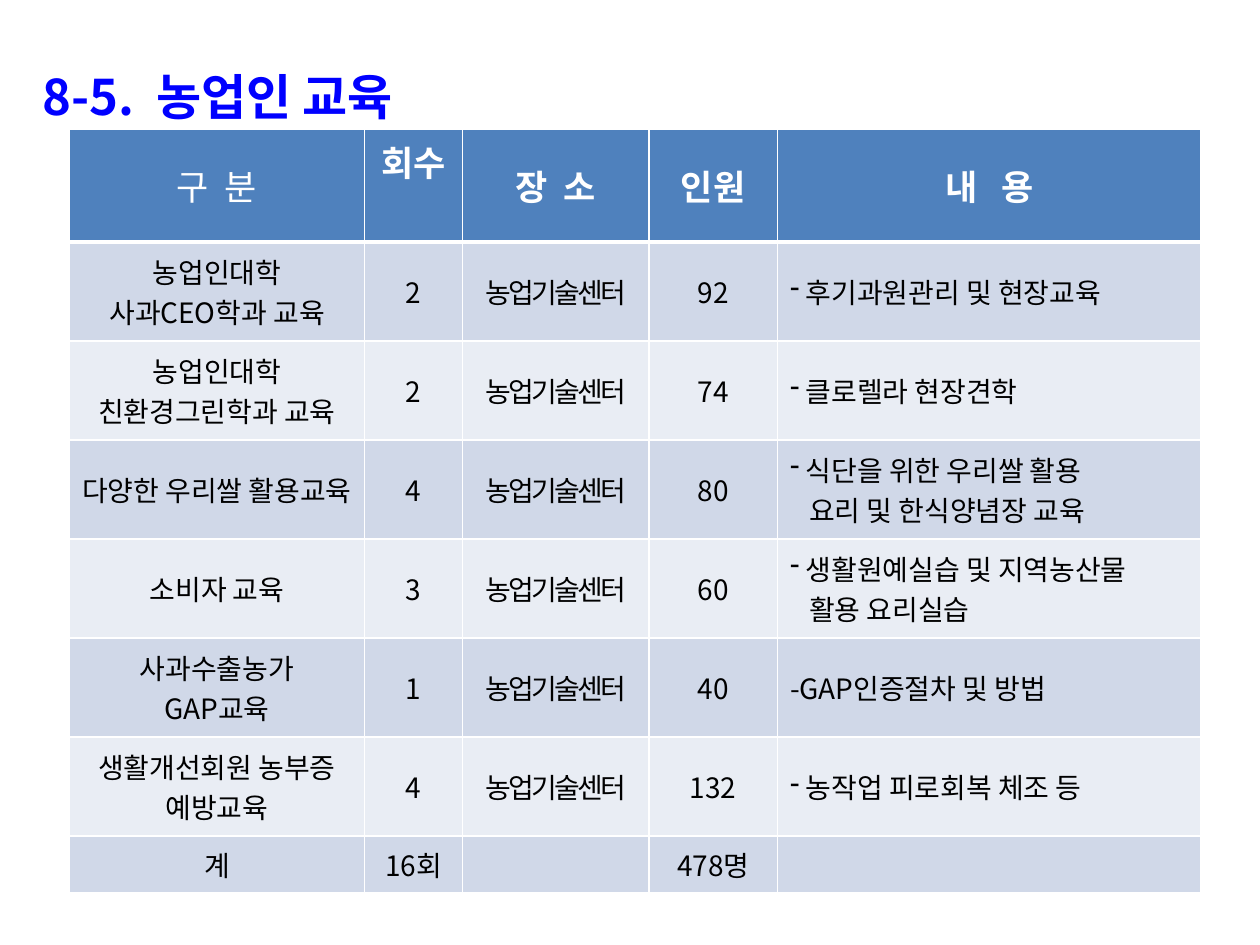
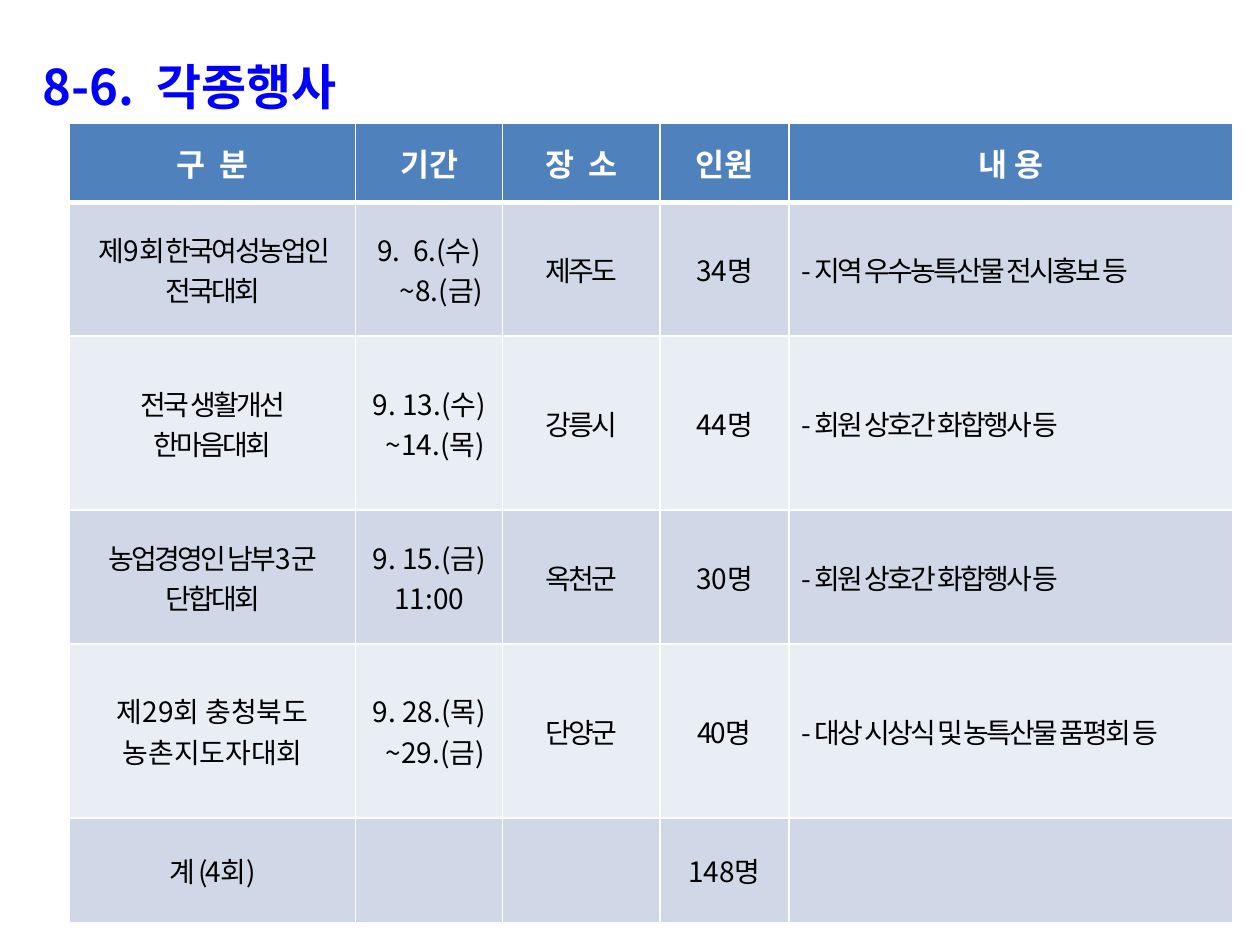
from dataclasses import dataclass
from lxml.etree import SubElement as Sub
from pptx import Presentation
from pptx.dml.color import RGBColor as Rgb
from pptx.enum.text import MSO_ANCHOR as Anchor, MSO_AUTO_SIZE as Fit, PP_ALIGN as Align
from pptx.oxml import parse_xml
from pptx.oxml.ns import nsdecls, qn
from pptx.util import Pt


@dataclass(frozen=True)
class Theme:
    face: str = "Noto Sans CJK KR"
    blue: str = "0000FF"
    head: str = "4F81BD"
    bands: tuple = ("D0D8E8", "E9EDF4")
    white: str = "FFFFFF"
    black: str = "000000"
    title: int = 28
    body: int = 16
    tight: float = -1.5


@dataclass(frozen=True)
class Line:
    text: str
    tight: bool = False
    left: bool = False
    dash: bool = False
    margin: float = 0
    indent: float = 0


THEME = Theme()
HANG = 27.5


def tight(text):
    return [Line(part, tight=True) for part in text.split("\n")]


def dash(text, *more):
    first = Line(text, left=True, dash=True, margin=9, indent=-9)
    return [first] + [Line(part, left=True, margin=11) for part in more]


def note(text):
    return [Line("- " + text, tight=True, left=True, margin=HANG, indent=-HANG)]


def hang(text, shift=0):
    return Line(text, margin=HANG, indent=shift - HANG)


def style(para, size, color, bold=False, space=0):
    font = para.font
    font.size = Pt(size)
    font.bold = bold
    font.color.rgb = Rgb.from_string(color)
    font.name = THEME.face
    props = para._p.pPr.find(qn("a:defRPr"))
    Sub(props, qn("a:ea")).set("typeface", THEME.face)
    if space:
        props.set("spc", str(round(space * 100)))


def inset(para, margin, indent):
    props = para._p.get_or_add_pPr()
    props.set("marL", str(Pt(margin)))
    props.set("indent", str(Pt(indent)))
    return props


def add_title(slide, text, top):
    box = slide.shapes.title
    box.left, box.top, box.width, box.height = Pt(17.3), Pt(top), Pt(680), Pt(47)
    frame = box.text_frame
    frame.word_wrap = True
    frame.auto_size = Fit.NONE
    frame.vertical_anchor = Anchor.MIDDLE
    para = frame.paragraphs[0]
    para.text = text
    para.alignment = Align.LEFT
    para.line_spacing = 1.2
    inset(para, 42, -42)
    style(para, THEME.title, THEME.blue, True)


def paint(cell, color):
    cell.fill.solid()
    cell.fill.fore_color.rgb = Rgb.from_string(color)
    cell.vertical_anchor = Anchor.MIDDLE


def rule(cell):
    edge = parse_xml(
        f'<a:lnB {nsdecls("a")} w="{Pt(3)}"><a:solidFill>'
        f'<a:srgbClr val="{THEME.white}"/></a:solidFill></a:lnB>')
    cell._tc.get_or_add_tcPr().insert(0, edge)


def fill_head(cell, text, size, bold):
    paint(cell, THEME.head)
    rule(cell)
    para = cell.text_frame.paragraphs[0]
    para.text = text
    para.alignment = Align.CENTER
    style(para, size, THEME.white, bold)


def fill_cell(cell, lines, color):
    paint(cell, color)
    if not lines:
        return
    if isinstance(lines, str):
        lines = [Line(part) for part in lines.split("\n")]
    frame = cell.text_frame
    for i, line in enumerate(lines):
        para = frame.add_paragraph() if i else frame.paragraphs[0]
        para.text = line.text
        para.alignment = Align.LEFT if line.left else Align.CENTER
        props = inset(para, line.margin, line.indent)
        if line.dash:
            Sub(props, qn("a:buChar")).set("char", "-")
        style(para, THEME.body, THEME.black, space=THEME.tight if line.tight else 0)


def add_grid(slide, top, widths, heights, heads, rows, size, plain=()):
    shape = slide.shapes.add_table(
        len(heights), len(widths), Pt(39.8), Pt(top), Pt(sum(widths)), Pt(sum(heights)))
    grid = shape.table
    grid.first_row = grid.horz_banding = False
    for col, width in zip(grid.columns, widths):
        col.width = Pt(width)
    for row, height in zip(grid.rows, heights):
        row.height = Pt(height)
    for c, text in enumerate(heads):
        fill_head(grid.cell(0, c), text, size, c not in plain)
    for r, row in enumerate(rows):
        for c, lines in enumerate(row):
            fill_cell(grid.cell(r + 1, c), lines, THEME.bands[r % 2])
    return grid


def add_page(deck, title, top):
    slide = deck.slides.add_slide(deck.slide_layouts[5])
    add_title(slide, title, top)
    return slide


def add_class(deck):
    site = tight("농업기술센터")
    rows = [
        ("농업인대학\n사과CEO학과 교육", "2", site, "92", dash("후기과원관리 및 현장교육")),
        ("농업인대학\n친환경그린학과 교육", "2", site, "74", dash("클로렐라 현장견학")),
        ("다양한 우리쌀 활용교육", "4", site, "80",
         dash("식단을 위한 우리쌀 활용", "요리 및 한식양념장 교육")),
        ("소비자 교육", "3", site, "60",
         dash("생활원예실습 및 지역농산물", "활용 요리실습")),
        ("사과수출농가\nGAP교육", "1", site, "40", [Line("-GAP인증절차 및 방법", left=True)]),
        ("생활개선회원 농부증 예방교육", "4", site, "132", dash("농작업 피로회복 체조 등")),
        ("계", "16회", "", "478명", ""),
    ]
    slide = add_page(deck, "8-5.  농업인 교육", 28)
    grid = add_grid(
        slide, 73.7, [168.5, 56, 106.5, 73.5, 242], [64.5] + [56.6] * 6 + [32.3],
        ["구  분", "회수", "장  소", "인원", "내   용"], rows, 20, plain=(0,))
    grid.cell(0, 1).vertical_anchor = Anchor.TOP


def add_events(deck):
    rows = [
        (tight("제9회 한국여성농업인 전국대회"),
         [Line("9.  6.(수)"), Line("~8.(금)", indent=14)],
         tight("제주도"), "34명", note("지역 우수농특산물 전시홍보 등")),
        (tight("전국 생활개선\n한마음대회"), [hang("9. 13.(수)"), hang("~14.(목)", 7)],
         tight("강릉시"), "44명", note("회원 상호간 화합행사 등")),
        (tight("농업경영인 남부3군\n단합대회"), [hang("9. 15.(금)"), hang("11:00")],
         tight("옥천군"), "30명", note("회원 상호간 화합행사 등")),
        ("제29회 충청북도\n농촌지도자대회",
         [Line("9. 28.(목)"), Line("~29.(금)", indent=7)],
         tight("단양군"), tight("40명"), note("대상 시상식 및 농특산물 품평회 등")),
        (tight("계 (4회)"), "", "", "148명", ""),
    ]
    slide = add_page(deck, "8-6.  각종행사", 22.3)
    add_grid(
        slide, 70.7, [163.5, 84, 90, 73.5, 253.5], [45, 76.3, 99.5, 76.3, 99.5, 59.8],
        ["구  분", "기간", "장  소", "인원", "내 용"], rows, 18)


def main():
    deck = Presentation()
    deck.slide_width, deck.slide_height = Pt(720), Pt(540)
    add_class(deck)
    add_events(deck)
    deck.save("out.pptx")


if __name__ == "__main__":
    main()
